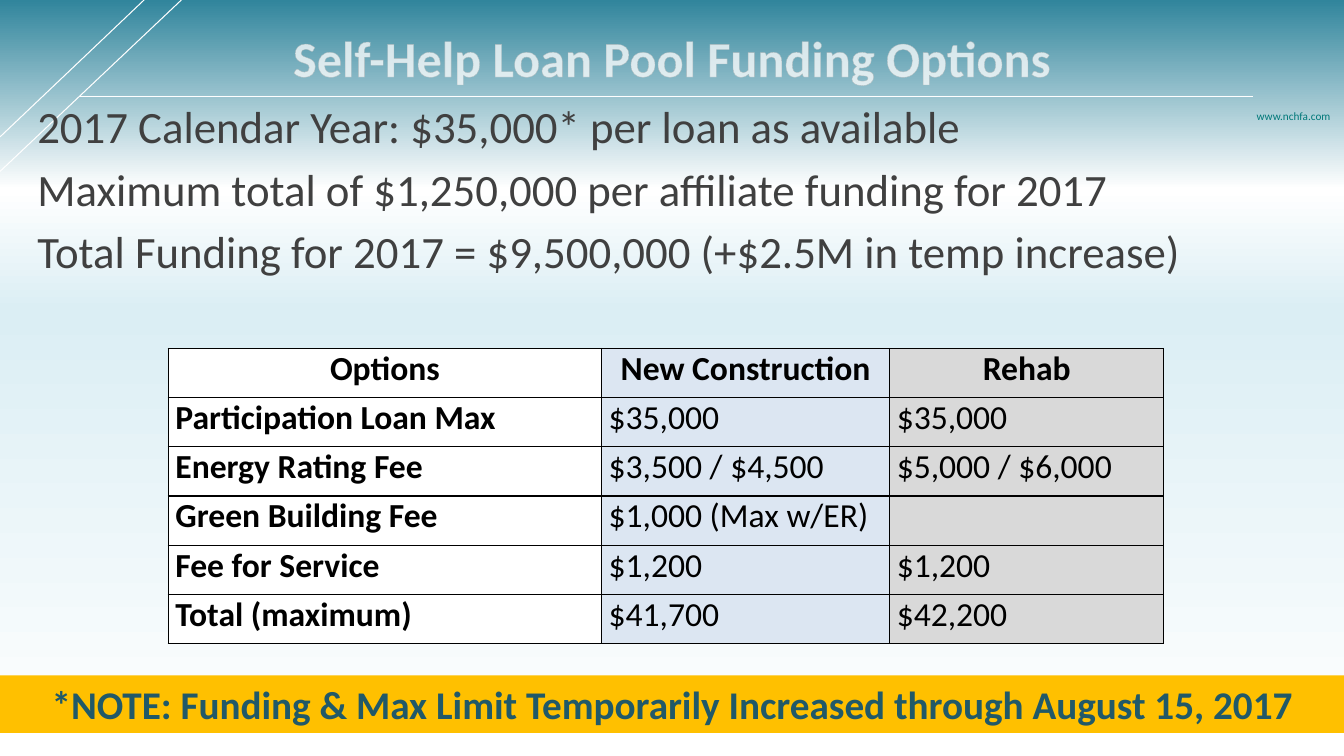
import pptx
import pptx.util
import pptx.oxml
from pptx.dml.color import RGBColor
from pptx.enum.shapes import MSO_CONNECTOR, MSO_SHAPE
from pptx.enum.text import MSO_ANCHOR, MSO_AUTO_SIZE, PP_ALIGN
from pptx.oxml.ns import qn
from pptx.util import Cm, Pt

TITLE = "Self-Help Loan Pool Funding Options"
SITE = "www.nchfa.com"
FACTS = [
    "2017 Calendar Year: $35,000* per loan as available",
    "Maximum total of $1,250,000 per affiliate funding for 2017",
    "Total Funding for 2017 = $9,500,000 (+$2.5M in temp increase)",
]
OPTIONS = [
    ("Options", "New Construction", "Rehab"),
    ("Participation Loan Max", "$35,000", "$35,000"),
    ("Energy Rating Fee", "$3,500 / $4,500", "$5,000 / $6,000"),
    ("Green Building Fee", "$1,000 (Max w/ER)", ""),
    ("Fee for Service", "$1,200", "$1,200"),
    ("Total (maximum)", "$41,700", "$42,200"),
]
NOTE = "*NOTE: Funding & Max Limit Temporarily Increased through August 15, 2017"

WHITE = RGBColor(0xFF, 0xFF, 0xFF)
BLACK = RGBColor(0, 0, 0)
GRAY = RGBColor(0x40, 0x40, 0x40)
TEAL = RGBColor(0x00, 0x78, 0x79)
DARK_TEAL = RGBColor(0x21, 0x59, 0x68)
AMBER = RGBColor(0xFF, 0xC0, 0x00)
COLUMN_FILLS = [WHITE, RGBColor(0xDC, 0xE6, 0xF2), RGBColor(0xD9, 0xD9, 0xD9)]
# position %, colour, opacity %
SKY = [(0, "FFFFFF", 100), (59, "DBEEF4", 100), (75, "FFFFFF", 86), (100, "31859C", 100)]

SLIDE_W, SLIDE_H = 33.87, 19.05
COLUMN_WIDTHS = [10.92, 7.26, 6.91]
ROW_HEIGHT = 1.24
RULES = [(0, 3.45, 3.63, 0), (0, 4.32, 4.57, 0), (2.01, 2.44, 31.57, 2.44)]


def xml(tag, body, attrs=""):
    ns = "http://schemas.openxmlformats.org/drawingml/2006/main"
    return pptx.oxml.parse_xml(f'<a:{tag} xmlns:a="{ns}" {attrs}>{body}</a:{tag}>')


def solid(color, opacity=100):
    return (f'<a:solidFill><a:srgbClr val="{color}">'
            f'<a:alpha val="{opacity * 1000}"/></a:srgbClr></a:solidFill>')


def style(p, size, color, bold=False, align=PP_ALIGN.LEFT):
    p.alignment = align
    for r in p.runs:
        r.font.name = "Calibri"
        r.font.size = Pt(size)
        r.font.bold = bold
        r.font.color.rgb = color


def outline(p, color, opacity=100):
    for r in p.runs:
        r.font._element.insert(0, xml("ln", solid(color, opacity), 'w="9525"'))


def add_text(s, box, text, wrap=True):
    tf = s.shapes.add_textbox(*map(Cm, box)).text_frame
    tf.word_wrap = wrap
    tf.text = text
    return tf


def paint_background(s):
    fill = s.background.fill
    fill.gradient()
    stops = "".join(
        f'<a:gs pos="{pos * 1000}"><a:srgbClr val="{color}">'
        f'<a:alpha val="{opacity * 1000}"/></a:srgbClr></a:gs>'
        for pos, color, opacity in SKY)
    grad = s._element.find(".//" + qn("a:gradFill"))
    grad.getparent().replace(grad, xml(
        "gradFill", f'<a:gsLst>{stops}</a:gsLst><a:lin ang="16200000" scaled="0"/>',
        'rotWithShape="1"'))


def add_rule(s, ends):
    line = s.shapes.add_connector(MSO_CONNECTOR.STRAIGHT, *map(Cm, ends))
    line.line.color.rgb = WHITE
    line.line.width = Pt(0.75)
    line._element.spPr.append(xml("effectLst", ""))


def fill_cell(cell, text, row, col):
    cell.margin_left = cell.margin_right = Cm(0.18)
    cell.margin_top = cell.margin_bottom = 0
    tc_pr = cell._tc.get_or_add_tcPr()
    for side in ("lnL", "lnR", "lnT", "lnB"):
        tc_pr.append(xml(side, solid(BLACK), 'w="12700"'))
    cell.fill.solid()
    cell.fill.fore_color.rgb = COLUMN_FILLS[col]
    cell.text = text
    style(cell.text_frame.paragraphs[0], 24, BLACK, row == 0 or col == 0,
          PP_ALIGN.CENTER if row == 0 else PP_ALIGN.JUSTIFY)


def add_options_table(s):
    frame = s.shapes.add_table(
        len(OPTIONS), len(COLUMN_WIDTHS), Cm(4.24), Cm(8.78),
        Cm(sum(COLUMN_WIDTHS)), Cm(ROW_HEIGHT * len(OPTIONS)))
    table = frame.table
    for column, width in zip(table.columns, COLUMN_WIDTHS):
        column.width = Cm(width)
    for i, texts in enumerate(OPTIONS):
        table.rows[i].height = Cm(ROW_HEIGHT)
        for j, text in enumerate(texts):
            fill_cell(table.cell(i, j), text, i, j)


def add_note(s):
    sp = s.shapes.add_shape(MSO_SHAPE.RECTANGLE, 0, Cm(17.02), Cm(SLIDE_W), Cm(1.45))
    sp.shadow.inherit = False
    sp.fill.solid()
    sp.fill.fore_color.rgb = AMBER
    sp.line.fill.background()
    tf = sp.text_frame
    tf.word_wrap = True
    tf.vertical_anchor = MSO_ANCHOR.TOP
    tf.text = NOTE
    style(tf.paragraphs[0], 28, DARK_TEAL, True, PP_ALIGN.CENTER)


def main():
    prs = pptx.Presentation()
    prs.slide_width, prs.slide_height = Cm(SLIDE_W), Cm(SLIDE_H)
    s = prs.slides.add_slide(prs.slide_layouts[6])
    paint_background(s)

    site = add_text(s, (31.42, 2.62, 2.41, 0.61), SITE, wrap=False)
    site.auto_size = MSO_AUTO_SIZE.SHAPE_TO_FIT_TEXT
    style(site.paragraphs[0], 8, TEAL)
    for ends in RULES:
        add_rule(s, ends)

    title = add_text(s, (1.7, 0.51, 30.48, 1.85), TITLE)
    title.vertical_anchor = MSO_ANCHOR.MIDDLE
    style(title.paragraphs[0], 36, WHITE, True, PP_ALIGN.CENTER)
    outline(title.paragraphs[0], "BFBFBF", 75)

    facts = add_text(s, (0.69, 2.36, 32.31, 14.66), "\n".join(FACTS))
    for i, p in enumerate(facts.paragraphs):
        style(p, 32, GRAY)
        outline(p, "009999")
        if i:
            p.space_before = Pt(6.4)

    add_options_table(s)
    add_note(s)
    prs.save("out.pptx")


if __name__ == "__main__":
    main()
